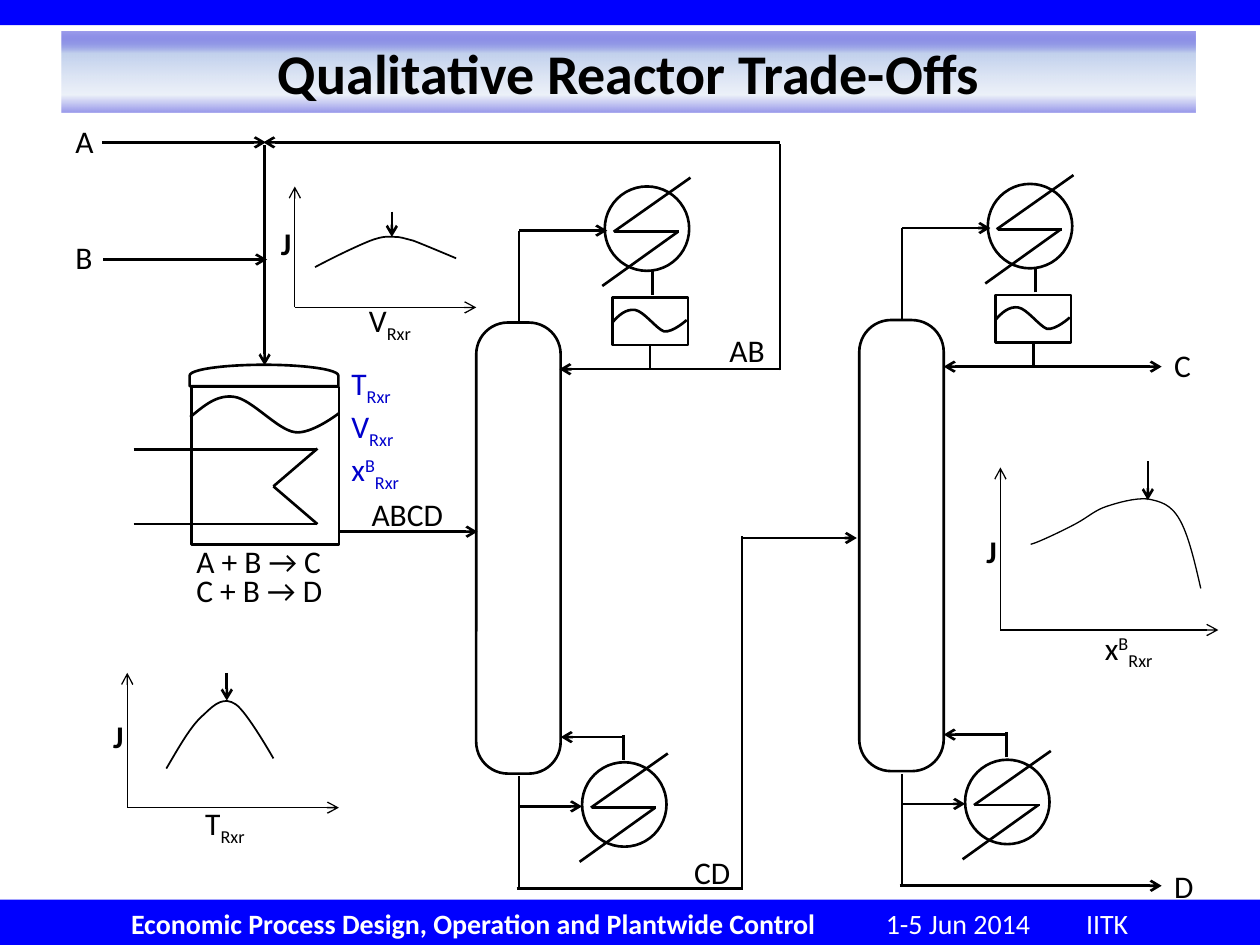
from lxml.etree import SubElement, fromstring
from pptx import Presentation
from pptx.dml.color import RGBColor
from pptx.enum.shapes import MSO_CONNECTOR, MSO_SHAPE
from pptx.enum.text import MSO_ANCHOR, PP_ALIGN
from pptx.oxml.ns import nsdecls, qn
from pptx.util import Inches, Pt

COLORS = {"ink": "000000", "bar": "0000FF", "variable": "0000CC", "white": "FFFFFF",
          "title_mid": "C2D1ED", "title_low": "D2DDF1"}
FONT = "Calibri"
SCRIPTS = {"^": 30, "_": -25}  # superscript and subscript marks, % of the line

prs = Presentation()
prs.slide_width, prs.slide_height = Inches(10), Inches(7.5)
slide = prs.slides.add_slide(prs.slide_layouts[5])
shapes = slide.shapes
# Grid of 10 columns by 7.5 rows
col, row = prs.slide_width / 10, prs.slide_height / 7.5


def at(*lengths):
    """Turn alternating columns and rows into slide lengths."""
    return [round(n * (row if i % 2 else col)) for i, n in enumerate(lengths)]


def style(font, size, color="ink", bold=False):
    font.name, font.size, font.bold = FONT, Pt(size), bold
    font.color.rgb = RGBColor.from_string(COLORS[color])


# Bars at top and bottom
for box in ((0, 0, 10, 0.2), (0, 7.14, 10, 0.37)):
    bar = shapes.add_shape(MSO_SHAPE.RECTANGLE, *at(*box))
    bar.shadow.inherit = False
    bar.fill.solid()
    bar.fill.fore_color.rgb = RGBColor.from_string(COLORS["bar"])
    bar.line.fill.background()

# Footer text, spaced by tab stops
footer = bar.text_frame
footer.margin_left, footer.margin_right = at(1.04)[0], 0
footer.vertical_anchor = MSO_ANCHOR.MIDDLE
course = footer.paragraphs[0]
course.alignment = PP_ALIGN.LEFT
tabs = SubElement(course._p.get_or_add_pPr(), qn("a:tabLst"))
for stop in (5.99, 7.58):
    SubElement(tabs, qn("a:tab"), pos=str(at(stop)[0]), algn="l")
for words, bold in (("Economic Process Design, Operation and Plantwide Control", True),
                    ("\t1-5 Jun 2014\tIITK", False)):
    run = course.add_run()
    run.text = words
    style(run.font, 16, "white", bold)

# Title on a gradient band
title = shapes.title
title.left, title.top, title.width, title.height = at(0.49, 0.25, 9, 0.64)
title.text_frame.text = "Qualitative Reactor Trade-Offs"
title.text_frame.vertical_anchor = MSO_ANCHOR.MIDDLE
title.text_frame.paragraphs[0].alignment = PP_ALIGN.CENTER
style(title.text_frame.paragraphs[0].runs[0].font, 32, bold=True)
stops = "".join(
    f'<a:gs pos="{pos}000"><a:srgbClr val="{COLORS[name]}"><a:alpha val="{alpha}000"/></a:srgbClr></a:gs>'
    for pos, name, alpha in ((1, "variable", 39), (27, "title_mid", 100),
                             (78, "title_low", 40), (100, "variable", 40)))
title.fill.solid()
solid = title._element.spPr.find(qn("a:solidFill"))
solid.getparent().replace(solid, fromstring(
    f'<a:gradFill {nsdecls("a")}><a:gsLst>{stops}</a:gsLst><a:lin ang="5400000" scaled="0"/></a:gradFill>'))

# Reactor: vessel, dome, liquid level and heating coil
RECT, ROUND, OVAL = MSO_SHAPE.RECTANGLE, MSO_SHAPE.ROUNDED_RECTANGLE, MSO_SHAPE.OVAL
outlines = [(RECT, 1.52, 3.07, 1.17, 1.25, 0),
            (MSO_SHAPE.FLOWCHART_DELAY, 2.01, 2.39, 0.17, 1.18, 270)]
curves = [(1.5, [(1.51, 3.31), (1.62, 3.22), (1.72, 3.13), (1.86, 3.15), (2, 3.17),
                 (2.2, 3.41), (2.34, 3.43), (2.47, 3.45), (2.69, 3.28), (2.69, 3.28)])]
# Streams: x1, y1, x2, y2, arrowheads (< at start, > at end), width
streams = [
    (1.06, 3.57, 2.52, 3.57, "", 1.5), (1.06, 4.16, 2.52, 4.16, "", 1.5),
    (2.17, 3.86, 2.52, 4.16, "", 1.5), (2.17, 3.86, 2.52, 3.56, "", 1.5),
    # Feeds, recycle and reactor effluent
    (0.81, 1.13, 2.11, 1.13, ">", 1.5), (0.82, 2.06, 2.12, 2.06, ">", 1.5),
    (2.1, 1.15, 2.1, 2.9, ">", 1.5), (6.19, 2.94, 6.19, 1.14, "", 1.5),
    (6.19, 1.13, 2.09, 1.13, ">", 1.5), (2.69, 4.22, 3.79, 4.22, ">", 1.5),
    # Bottoms of the first column to the second
    (4.1, 7.05, 5.9, 7.05, "", 1.5), (5.89, 7.05, 5.89, 4.25, "", 1.5),
    (5.9, 4.27, 6.8, 4.27, ">", 1.5),
    # Distillates and final bottoms
    (4.44, 2.93, 6.18, 2.93, "<", 1.5), (7.49, 2.91, 9.22, 2.91, "<>", 1.5),
    (7.14, 7.03, 9.22, 7.03, ">", 1.5),
]

# Two distillation columns, the second shifted from the first
for dx, dy in ((0, 0), (3.04, -0.02)):
    outlines += [(ROUND, 3.78 + dx, 2.56 + dy, 0.67, 3.58, 0),
                 (RECT, 4.86 + dx, 2.36 + dy, 0.6, 0.38, 0)]
    drum_level = [(4.86, 2.56), (4.91, 2.5), (4.97, 2.45), (5.04, 2.46), (5.11, 2.47),
                  (5.21, 2.61), (5.27, 2.63), (5.34, 2.64), (5.45, 2.54), (5.45, 2.54)]
    curves.append((1.5, [(x + dx, y + dy) for x, y in drum_level]))
    pipes = [(4.12, 2.56, 4.12, 1.83, ""), (4.12, 1.83, 4.82, 1.83, ">"),
             (5.18, 2.34, 5.18, 2.14, ""), (5.16, 2.93, 5.16, 2.73, ""),
             (4.12, 7.06, 4.12, 6.16, ""), (4.12, 6.4, 4.62, 6.4, ">"),
             (4.95, 6.03, 4.95, 5.83, ""), (4.95, 5.85, 4.45, 5.85, ">")]
    # Condenser and reboiler symbols
    for x, y in ((4.8, 1.48), (4.62, 6.05)):
        outlines.append((OVAL, x + dx, y + dy, 0.67, 0.67, 0))
        pipes += [(x + 0.68, y - 0.07, x + 0.07, y + 0.36, ""),
                  (x + 0.58, y + 0.36, x - 0.02, y + 0.79, ""),
                  (x + 0.08, y + 0.36, x + 0.59, y + 0.36, "")]
    streams += [(x1 + dx, y1 + dy, x2 + dx, y2 + dy, heads, 1.5)
                for x1, y1, x2, y2, heads in pipes]

# Trade-off plots: axis origin, axis ends, optimum arrow (x, from, to)
for x, y, right, top, best, start, end in (
        (1.01, 6.41, 2.69, 5.34, 1.8, 5.34, 5.56),
        (2.34, 2.44, 3.78, 1.48, 3.11, 1.68, 1.88),
        (7.94, 5, 9.67, 3.71, 9.11, 3.66, 3.97)):
    streams += [(x, y, right, y, ">", 0.75), (x, y, x, top, ">", 0.75),
                (best, start, best, end, ">", 1.5)]
curves += [
    (1, [(1.32, 6.1), (1.42, 5.93), (1.52, 5.75), (1.62, 5.67), (1.71, 5.58),
         (1.78, 5.53), (1.87, 5.59), (1.96, 5.65), (2.17, 6.02), (2.17, 6.02)]),
    (1, [(2.5, 2.12), (2.67, 2.03), (2.84, 1.95), (2.94, 1.91), (3.05, 1.87),
         (3.07, 1.88), (3.13, 1.88), (3.18, 1.88), (3.2, 1.89), (3.28, 1.91),
         (3.36, 1.94), (3.62, 2.05), (3.62, 2.05)]),
    (0.75, [(9.53, 4.67), (9.48, 4.45), (9.43, 4.24), (9.36, 4.12), (9.29, 4),
            (9.21, 3.98), (9.11, 3.96), (9.01, 3.95), (8.87, 3.99), (8.78, 4.02),
            (8.69, 4.05), (8.64, 4.1), (8.55, 4.15), (8.46, 4.2), (8.23, 4.31), (8.18, 4.32)]),
]

# Draw equipment outlines
for kind, x, y, w, h, turn in outlines:
    vessel = shapes.add_shape(kind, *at(x, y, w, h))
    vessel.rotation = turn
    vessel.shadow.inherit = False
    vessel.fill.background()
    vessel.line.color.rgb = RGBColor.from_string(COLORS["ink"])
    vessel.line.width = Pt(1.5)
    if kind == ROUND:
        vessel.adjustments[0] = 0.376

# Draw curves: every three points after the first make one Bezier segment
for width, points in curves:
    start, *rest = [at(*point) for point in points]
    builder = shapes.build_freeform(*start, scale=1.0)
    builder.add_line_segments(rest, close=False)
    curve = builder.convert_to_shape()
    curve.shadow.inherit = False
    curve.fill.background()
    curve.line.color.rgb = RGBColor.from_string(COLORS["ink"])
    curve.line.width = Pt(width)
    segments = list(curve._element.iter(qn("a:lnTo")))
    for i in range(0, len(segments), 3):
        bezier = SubElement(segments[i].getparent(), qn("a:cubicBezTo"))
        for segment in segments[i:i + 3]:
            bezier.append(segment[0])
            segment.getparent().remove(segment)

# Draw streams and axes
for x1, y1, x2, y2, heads, width in streams:
    stream = shapes.add_connector(MSO_CONNECTOR.STRAIGHT, *at(x1, y1, x2, y2))
    stream.line.color.rgb = RGBColor.from_string(COLORS["ink"])
    stream.line.width = Pt(width)
    for mark, tag in (("<", "a:headEnd"), (">", "a:tailEnd")):
        if mark in heads:
            SubElement(stream.line._get_or_add_ln(), qn(tag), type="arrow")
    SubElement(stream._element.spPr, qn("a:effectLst"))

# Labels: left, top, width, lines of runs
for x, y, w, *lines in (
        (0.5, 0.92, 0.35, ["A"]), (0.5, 1.84, 0.34, ["B"]),
        (1.46, 4.25, 1.2, ["A + B → C"]), (1.46, 4.48, 1.22, ["C + B → D"]),
        (2.85, 3.88, 0.78, ["ABCD"]), (5.69, 2.58, 0.48, ["AB"]), (5.41, 6.72, 0.49, ["CD"]),
        (9.22, 2.7, 0.34, ["C"]), (9.22, 6.83, 0.36, ["D"]),
        (0.8, 5.64, 0.29, ["J"]), (2.13, 1.73, 0.29, ["J"]), (7.73, 4.17, 0.29, ["J"]),
        (1.53, 6.33, 0.55, ["T", "_Rxr"]), (2.83, 2.34, 0.57, ["V", "_Rxr"]),
        (8.67, 4.94, 0.62, ["x", "^B", "_Rxr"]),
        (2.69, 2.84, 0.62, ["T", "_Rxr"], ["V", "_Rxr"], ["x", "^B", "_Rxr"])):
    label = shapes.add_textbox(*at(x, y, w, 0.4 if len(lines) == 1 else 1.01)).text_frame
    label.word_wrap = False
    for i, parts in enumerate(lines):
        line = label.add_paragraph() if i else label.paragraphs[0]
        for part in parts:
            run = line.add_run()
            run.text = part.lstrip("^_")
            style(run.font, 18, "variable" if len(lines) > 1 else "ink", part == "J")
            if part[0] in SCRIPTS:
                run.font._element.set("baseline", f"{SCRIPTS[part[0]]}000")

prs.save("out.pptx")
